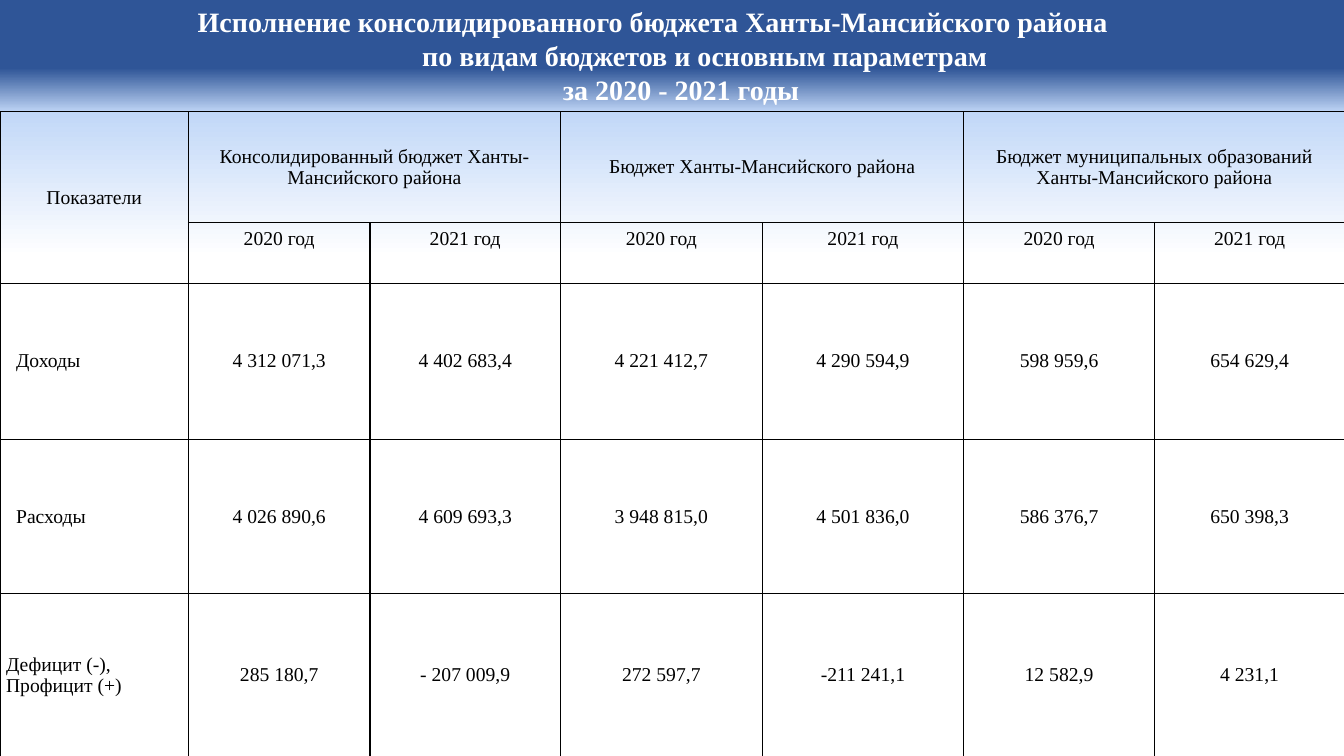
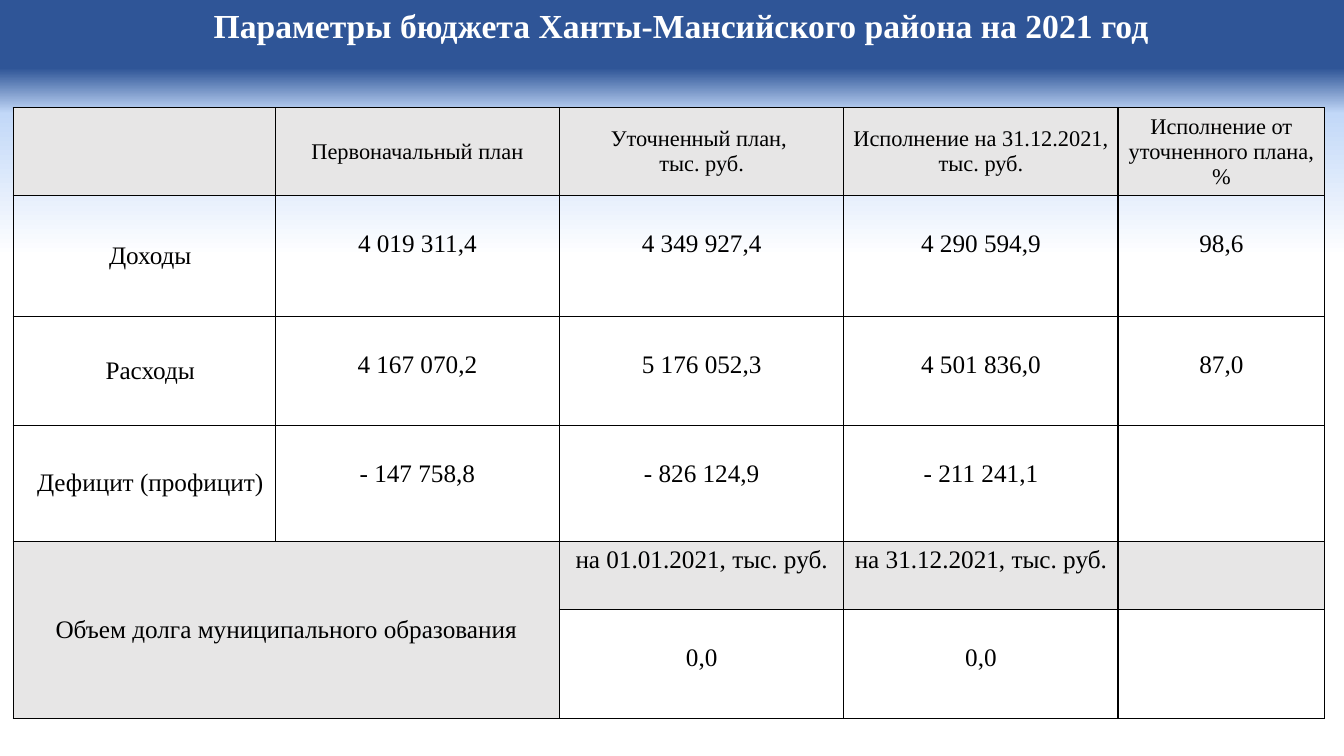
from dataclasses import dataclass

from lxml.etree import SubElement
from pptx import Presentation
from pptx.dml.color import RGBColor
from pptx.enum.text import MSO_ANCHOR as Anchor, MSO_AUTO_SIZE as AutoSize, PP_ALIGN as Align
from pptx.oxml.ns import qn
from pptx.util import Inches, Pt

FONT = "Times New Roman"
NAVY = RGBColor(0x2F, 0x55, 0x97)
SKY = RGBColor(0xC2, 0xD8, 0xF8)
WHITE = RGBColor(0xFF, 0xFF, 0xFF)
BLACK = RGBColor(0x00, 0x00, 0x00)
GREY = RGBColor(0xE7, 0xE6, 0xE6)
BACKDROP = ((9, NAVY), (15, SKY), (34, WHITE))

TITLE_LEFT, TITLE_WIDTH = 1.85, 9.81
TIGHT = (0.06, 0, 0.06, 0)
ROOMY = (0.1, 0.05, 0.1, 0.05)
LOWERED = (0.1, 0.34, 0.1, 0.05)


@dataclass(frozen=True)
class CellStyle:
    size: int
    anchor: Anchor = Anchor.MIDDLE
    insets: tuple = TIGHT
    align: Align = Align.CENTER
    indent: float = 0
    fill: RGBColor = None


def paint_backdrop(master):
    """Give every slide the vertical navy-to-white gradient."""
    fill = master.background.fill
    fill.gradient()
    gradient = master.element.find(".//" + qn("a:gradFill"))
    for part in list(gradient):
        gradient.remove(part)
    stops = SubElement(gradient, qn("a:gsLst"))
    for percent, color in BACKDROP:
        stop = SubElement(stops, qn("a:gs"), pos=str(percent * 1000))
        SubElement(stop, qn("a:srgbClr"), val=str(color))
    SubElement(gradient, qn("a:lin"), ang="5400000", scaled="0")


def write_lines(frame, lines, size, color, align=Align.CENTER, bold=False):
    """Write (text, left indent) pairs, one paragraph each."""
    for number, (text, indent) in enumerate(lines):
        paragraph = frame.add_paragraph() if number else frame.paragraphs[0]
        paragraph.alignment = align
        if indent:
            paragraph._p.get_or_add_pPr().set("marL", str(Inches(indent)))
        run = paragraph.add_run()
        run.text = text
        font = run.font
        font.name, font.size, font.bold = FONT, Pt(size), bold
        font.color.rgb = color


def add_title(slide, lines, size, height, side_insets=(0.1, 0.1)):
    title = slide.shapes.add_textbox(
        Inches(TITLE_LEFT), 0, Inches(TITLE_WIDTH), Inches(height))
    frame = title.text_frame
    frame.word_wrap = True
    frame.auto_size = AutoSize.SHAPE_TO_FIT_TEXT
    frame.margin_left, frame.margin_right = map(Inches, side_insets)
    write_lines(frame, lines, size, WHITE, bold=True)


def draw_borders(cell):
    properties = cell._tc.get_or_add_tcPr()
    for side in ("a:lnL", "a:lnR", "a:lnT", "a:lnB"):
        line = SubElement(properties, qn(side), w=str(Pt(1)))
        solid = SubElement(line, qn("a:solidFill"))
        SubElement(solid, qn("a:srgbClr"), val=str(BLACK))


def fill_cell(cell, text, style):
    draw_borders(cell)
    if style.fill is None:
        cell.fill.background()
    else:
        cell.fill.solid()
        cell.fill.fore_color.rgb = style.fill
    cell.vertical_anchor = style.anchor
    (cell.margin_left, cell.margin_top,
     cell.margin_right, cell.margin_bottom) = map(Inches, style.insets)
    if text:
        lines = [(line, style.indent) for line in text.split("\n")]
        write_lines(cell.text_frame, lines, style.size, BLACK, style.align)


def add_grid(slide, left, top, widths, heights, texts, style_of, merges):
    """Place a bordered table; style_of(row, column) chooses each cell's style."""
    table = slide.shapes.add_table(
        len(heights), len(widths), Inches(left), Inches(top),
        Inches(sum(widths)), Inches(sum(heights))).table
    table.first_row = table.horz_banding = False
    for column, width in zip(table.columns, widths):
        column.width = Inches(width)
    for row, height in zip(table.rows, heights):
        row.height = Inches(height)
    for r, row_texts in enumerate(texts):
        for c, text in enumerate(row_texts):
            fill_cell(table.cell(r, c), text, style_of(r, c))
    for first, last in merges:
        table.cell(*first).merge(table.cell(*last))


def execution_style(row, column):
    if row == 1 and column:
        return CellStyle(14, Anchor.TOP, ROOMY)
    if row < 2:
        return CellStyle(14)
    if column:
        return CellStyle(14, insets=ROOMY)
    return CellStyle(14, align=Align.LEFT, indent=0.1 if row < 4 else 0)


def build_execution_slide(slide):
    add_title(slide, [
        ("Исполнение консолидированного бюджета Ханты-Мансийского района", 0),
        ("по видам бюджетов и основным параметрам", 1.03),
        ("за 2020 - 2021 годы", 0.56),
    ], 20, 1.11, side_insets=(0.05, 0.61))
    texts = [
        ["Показатели",
         "Консолидированный бюджет Ханты-Мансийского района", "",
         "Бюджет Ханты-Мансийского района", "",
         "Бюджет муниципальных образований Ханты-Мансийского района", ""],
        [""] + ["2020 год", "2021 год"] * 3,
        ["Доходы", "4 312 071,3", "4 402 683,4", "4 221 412,7",
         "4 290 594,9", "598 959,6", "654 629,4"],
        ["Расходы", "4 026 890,6", "4 609 693,3", "3 948 815,0",
         "4 501 836,0", "586 376,7", "650 398,3"],
        ["Дефицит (-), Профицит (+)", "285 180,7", "- 207 009,9", "272 597,7",
         "-211 241,1", "12 582,9", "4 231,1"],
    ]
    budget_heads = [((0, c), (0, c + 1)) for c in (1, 3, 5)]
    add_grid(slide, 0, 1.11, [1.87, 1.8, 1.89, 2, 2, 1.89, 1.89],
             [1.1, 0.6, 1.55, 1.53, 1.62], texts, execution_style,
             [((0, 0), (1, 0))] + budget_heads)


def parameters_style(row, column):
    if row == 0:
        return CellStyle(16, fill=GREY)
    if row >= 4 and column < 2:
        return CellStyle(18, fill=GREY)
    if row == 4:
        return CellStyle(18, Anchor.TOP, ROOMY, fill=GREY)
    if column == 0:
        return CellStyle(18, indent=0.12)
    return CellStyle(18, Anchor.TOP, LOWERED)


def build_parameters_slide(slide):
    add_title(slide, [("Параметры бюджета Ханты-Мансийского района на 2021 год", 0)],
              24, 0.5)
    texts = [
        ["", "Первоначальный план", "Уточненный план, \nтыс. руб.",
         "Исполнение на 31.12.2021,\nтыс. руб.",
         "Исполнение от уточненного плана, %"],
        ["Доходы", "4 019 311,4", "4 349 927,4", "4 290 594,9", "98,6"],
        ["Расходы", "4 167 070,2", "5 176 052,3", "4 501 836,0", "87,0"],
        ["Дефицит (профицит)", "- 147 758,8", "- 826 124,9", "- 211 241,1", ""],
        ["Объем долга муниципального образования", "",
         "на 01.01.2021, тыс. руб.", "на 31.12.2021, тыс. руб.", ""],
        ["", "", "0,0", "0,0", ""],
    ]
    add_grid(slide, 0.13, 1.07, [2.6, 2.82, 2.82, 2.72, 2.05],
             [0.87, 1.2, 1.08, 1.15, 0.68, 1.08], texts, parameters_style,
             [((4, 0), (5, 1))])


def main():
    deck = Presentation()
    deck.slide_width, deck.slide_height = Inches(13.33), Inches(7.5)
    paint_backdrop(deck.slide_master)
    blank = deck.slide_layouts[6]
    for build in (build_execution_slide, build_parameters_slide):
        build(deck.slides.add_slide(blank))
    deck.save("out.pptx")


if __name__ == "__main__":
    main()
